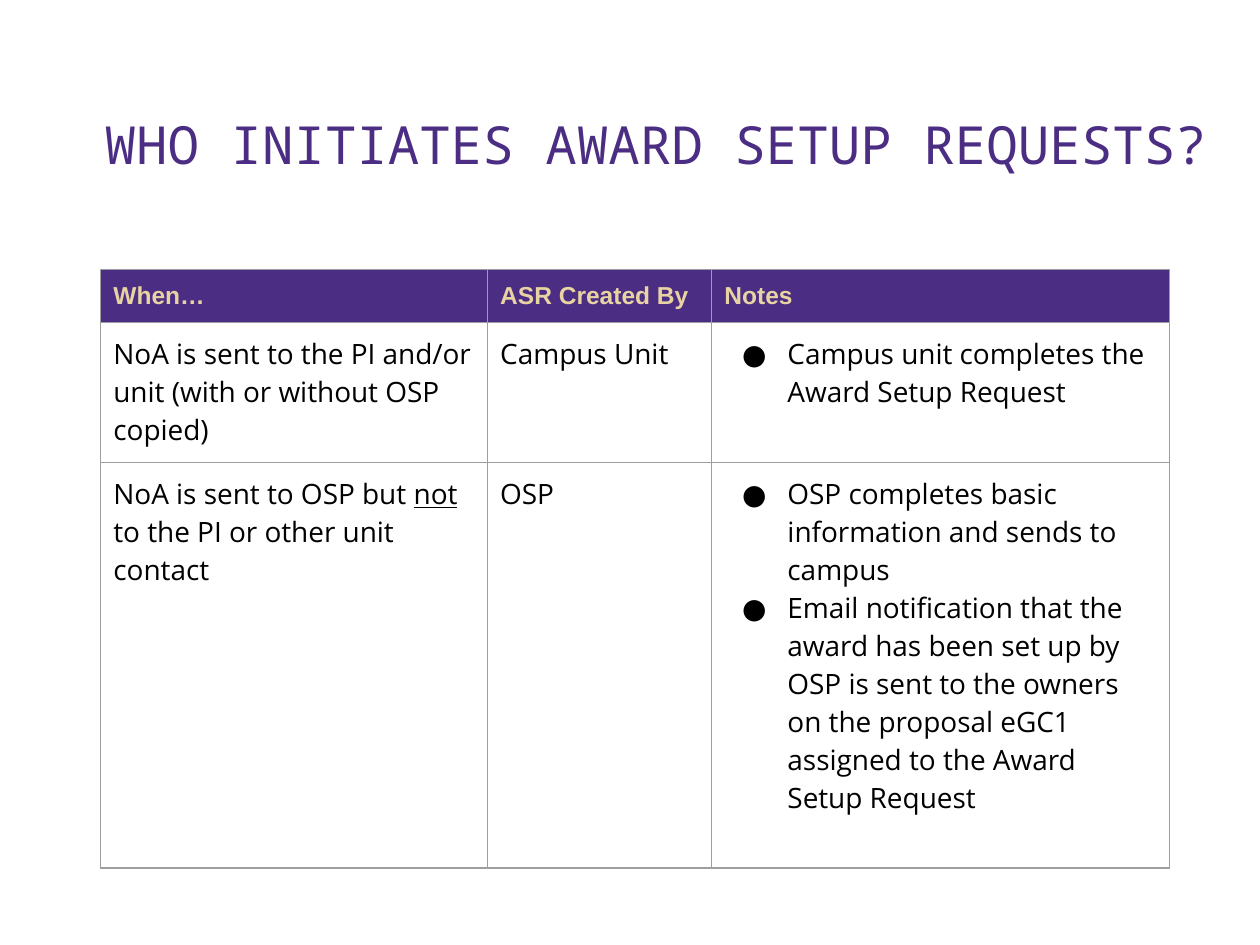
from dataclasses import dataclass

from lxml import etree
from pptx import Presentation
from pptx.dml.color import RGBColor
from pptx.enum import text as t
from pptx.oxml.ns import qn
from pptx.util import Inches, Pt


@dataclass(frozen=True)
class Theme:
    purple: str = "4B2E83"
    gold: str = "E8D3A2"
    black: str = "000000"
    grey: str = "9E9E9E"
    title: int = 30
    head: int = 14
    body: int = 16
    mono: str = "Noto Sans Mono"
    arial: str = "Arial"
    sans: str = "Open Sans"


THEME = Theme()
COLS = (3.07, 1.78, 3.63)
ROWS = (0.41, 1.11, 3.22)
HEADS = ("When…", "ASR Created By", "Notes")
CASES = (
    ("NoA is sent to the PI and/or unit (with or without OSP copied)",
     "Campus Unit",
     ["Campus unit completes the Award Setup Request"]),
    ("NoA is sent to OSP but _not_ to the PI or other unit contact",
     "OSP",
     ["OSP completes basic information and sends to campus",
      "Email notification that the award has been set up by OSP is sent to "
      "the owners on the proposal eGC1 assigned to the Award Setup Request"]),
)


def add_bullet(para):
    props = para._p.get_or_add_pPr()
    props.set("marL", str(Inches(0.5)))
    props.set("indent", str(Inches(-0.36)))
    tint = etree.SubElement(props, qn("a:buClr"))
    etree.SubElement(tint, qn("a:srgbClr"), val=THEME.black)
    etree.SubElement(props, qn("a:buFont"), typeface=THEME.sans)
    etree.SubElement(props, qn("a:buChar"), char="●")


def write(frame, lines, font=THEME.sans, size=THEME.body, color=THEME.black,
          bold=False, bullet=False, spacing=None):
    """Fill a text frame; words between underscores are underlined."""
    frame.word_wrap = True
    for i, line in enumerate(lines):
        para = frame.add_paragraph() if i else frame.paragraphs[0]
        para.alignment = t.PP_ALIGN.LEFT
        para.space_before = Pt(0)
        if spacing:
            para.line_spacing = spacing
        if bullet:
            add_bullet(para)
        for j, part in enumerate(line.split("_")):
            run = para.add_run()
            run.text = part
            run.font.name = font
            run.font.size = Pt(size)
            run.font.bold = bold
            run.font.color.rgb = RGBColor.from_string(color)
            if j % 2:
                run.font.underline = True


def set_inset(box):
    box.margin_left = box.margin_right = Inches(0.1)
    box.margin_top = box.margin_bottom = Inches(0.1)


def add_border(cell):
    props = cell._tc.get_or_add_tcPr()
    for side in ("lnL", "lnR", "lnT", "lnB"):
        line = etree.SubElement(props, qn(f"a:{side}"), w=str(Pt(0.75)))
        fill = etree.SubElement(line, qn("a:solidFill"))
        etree.SubElement(fill, qn("a:srgbClr"), val=THEME.grey)


def fill_cell(cell, lines, fill=None, **style):
    set_inset(cell)
    add_border(cell)
    if fill:
        cell.fill.solid()
        cell.fill.fore_color.rgb = RGBColor.from_string(fill)
    else:
        cell.fill.background()
    write(cell.text_frame, lines, **style)


def add_title(slide, words):
    title = slide.shapes.title
    title.left, title.top = Inches(0.73), Inches(0.41)
    title.width, title.height = Inches(9.27), Inches(1.08)
    frame = title.text_frame
    frame.auto_size = t.MSO_AUTO_SIZE.NONE
    frame.vertical_anchor = t.MSO_ANCHOR.BOTTOM
    set_inset(frame)
    write(frame, [words], font=THEME.mono, size=THEME.title,
          color=THEME.purple, spacing=0.8)


def add_grid(slide):
    grid = slide.shapes.add_table(
        len(ROWS), len(COLS), Inches(0.8), Inches(2.14),
        Inches(sum(COLS)), Inches(sum(ROWS))).table
    grid.first_row = grid.horz_banding = False
    for col, width in zip(grid.columns, COLS):
        col.width = Inches(width)
    for row, height in zip(grid.rows, ROWS):
        row.height = Inches(height)
    for c, head in enumerate(HEADS):
        fill_cell(grid.cell(0, c), [head], fill=THEME.purple, font=THEME.arial,
                  size=THEME.head, color=THEME.gold, bold=True)
    for r, (when, maker, notes) in enumerate(CASES, 1):
        fill_cell(grid.cell(r, 0), [when])
        fill_cell(grid.cell(r, 1), [maker])
        fill_cell(grid.cell(r, 2), notes, bullet=True)


def main():
    deck = Presentation()
    deck.slide_width, deck.slide_height = Inches(10), Inches(7.5)
    slide = deck.slides.add_slide(deck.slide_layouts[5])
    add_title(slide, "WHO INITIATES AWARD SETUP REQUESTS?")
    add_grid(slide)
    deck.save("out.pptx")


if __name__ == "__main__":
    main()
